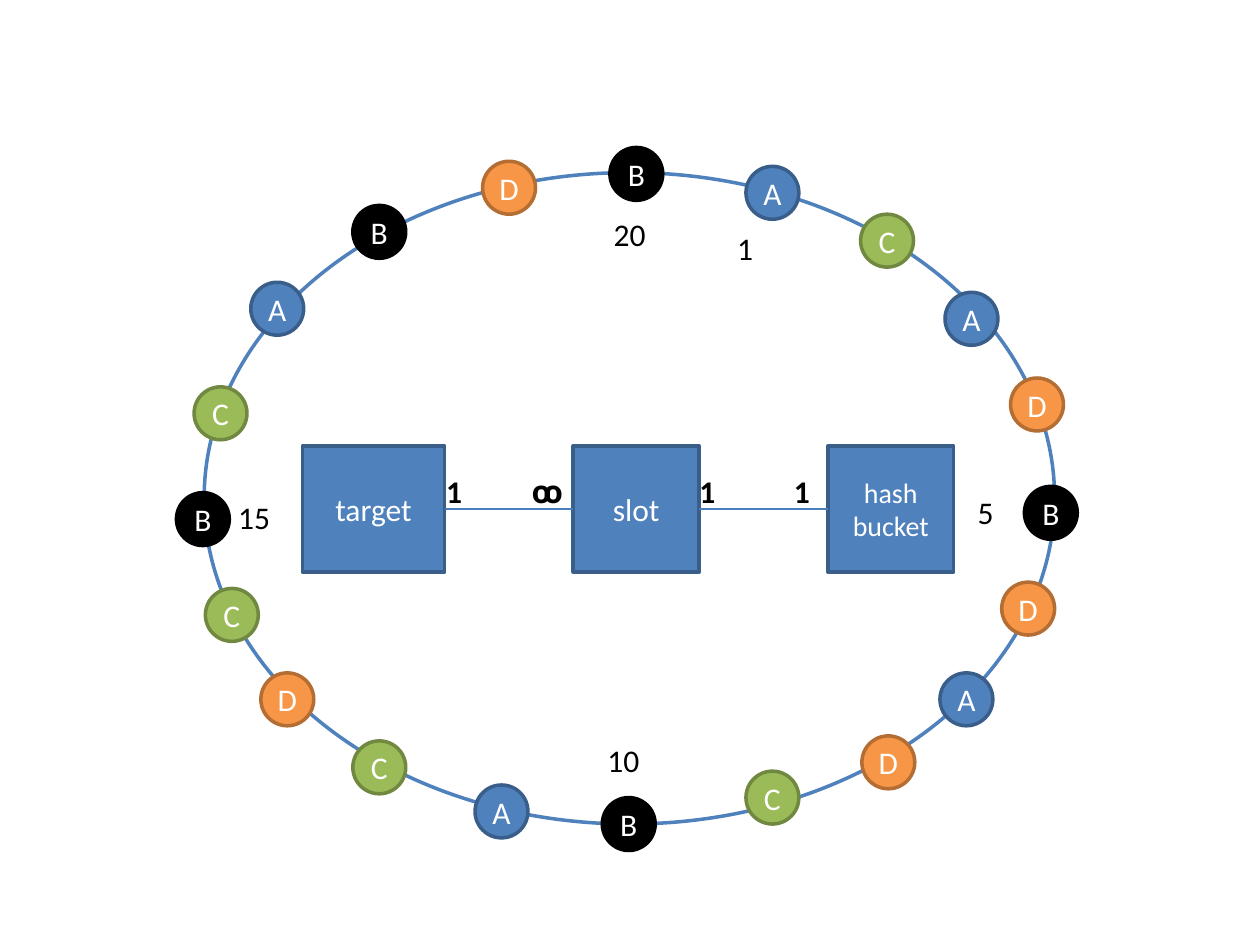
from itertools import pairwise

from lxml.etree import SubElement
from pptx import Presentation
from pptx.dml.color import RGBColor
from pptx.enum.shapes import MSO_CONNECTOR, MSO_SHAPE
from pptx.enum.text import MSO_ANCHOR, PP_ALIGN
from pptx.oxml.ns import qn
from pptx.util import Inches, Pt

BLUE = ("4F81BD", "3A5E8A")
NODE_COLORS = {
    "A": BLUE,
    "B": ("000000", "000000"),
    "C": ("9BBB59", "718841"),
    "D": ("F79646", "B46D33"),
}
NODES = [
    ("B", 3.22, -0.20), ("A", 4.30, -0.05), ("C", 5.21, 0.33), ("A", 5.88, 0.95),
    ("D", 6.40, 1.63), ("B", 6.51, 2.49), ("D", 6.33, 3.25), ("A", 5.84, 3.97),
    ("D", 5.22, 4.47), ("C", 4.30, 4.75), ("B", 3.16, 4.96), ("A", 2.15, 4.86),
    ("C", 1.18, 4.51), ("D", 0.45, 3.97), ("C", 0.01, 3.30), ("B", -0.22, 2.54),
    ("C", -0.08, 1.70), ("A", 0.37, 0.87), ("B", 1.18, 0.26), ("D", 2.21, -0.09),
]
POSITIONS = [
    ("1", 4.18, 0.40, 0.24), ("5", 6.09, 2.49, 0.24), ("10", 3.15, 4.46, 0.38),
    ("15", 0.22, 2.53, 0.38), ("20", 3.20, 0.29, 0.38),
]
ENTITIES = [("target", 0, 1.13, 18), ("slot", 2.15, 1, 18), ("hash bucket", 4.17, 1, 16)]
CARDINALITIES = [("1", 1.09), ("ꝏ", 1.77), ("1", 3.10), ("1", 3.85)]
NODE_SIZE = 0.42


def rgb(color):
    return RGBColor.from_string(color)


def set_text(sp, text, color, size=18, margin=0.05, bold=False):
    tf = sp.text_frame
    tf.margin_left = tf.margin_right = tf.margin_top = tf.margin_bottom = Inches(margin)
    tf.text = text
    p = tf.paragraphs[0]
    f = p.runs[0].font
    f.name, f.size, f.bold = "Calibri", Pt(size), bold
    f.color.rgb = rgb(color)
    return p


def add_shape(s, kind, left, top, width, height, colors):
    sp = s.shapes.add_shape(kind, Inches(left), Inches(top), Inches(width), Inches(height))
    sp.shadow.inherit = False
    fill, line = colors
    sp.fill.solid()
    sp.fill.fore_color.rgb = rgb(fill)
    sp.line.color.rgb = rgb(line)
    sp.line.width = Pt(2)
    return sp


def center_text(sp, text, size, margin):
    p = set_text(sp, text, "FFFFFF", size, margin)
    p.alignment = PP_ALIGN.CENTER
    sp.text_frame.word_wrap = True
    sp.text_frame.vertical_anchor = MSO_ANCHOR.MIDDLE


def add_label(s, text, left, top, width, bold=False):
    sp = s.shapes.add_textbox(Inches(left), Inches(top), Inches(width), Inches(0.39))
    sp.text_frame.word_wrap = False
    set_text(sp, text, "000000", bold=bold)


def add_link(s, start, end):
    cn = s.shapes.add_connector(MSO_CONNECTOR.STRAIGHT, 0, 0, 0, 0)
    cn.begin_connect(start, 3)
    cn.end_connect(end, 1)
    cn.line.color.rgb = rgb("4A7EBB")
    cn.line.width = Pt(0.75)
    SubElement(cn._element.spPr, qn("a:effectLst"))


def add_ring(s, left, top, width, height):
    add_shape(s, MSO_SHAPE.OVAL, left, top, width, height, ("FFFFFF", BLUE[0]))
    for letter, dx, dy in NODES:
        node = add_shape(s, MSO_SHAPE.OVAL, left + dx, top + dy,
                         NODE_SIZE, NODE_SIZE, NODE_COLORS[letter])
        center_text(node, letter, 18, 0)
    for text, dx, dy, label_width in POSITIONS:
        add_label(s, text, left + dx, top + dy, label_width)


def add_relations(s, left, top, height):
    boxes = []
    for name, dx, width, size in ENTITIES:
        box = add_shape(s, MSO_SHAPE.RECTANGLE, left + dx, top, width, height, BLUE)
        center_text(box, name, size, 0.05)
        boxes.append(box)
    for start, end in pairwise(boxes):
        add_link(s, start, end)
    for text, dx in CARDINALITIES:
        add_label(s, text, left + dx, top + 0.16, 0.26 if text == "1" else 0.33, bold=True)


def main():
    prs = Presentation()
    prs.slide_width, prs.slide_height = Inches(10), Inches(7.5)
    s = prs.slides.add_slide(prs.slide_layouts[6])
    add_ring(s, 1.62, 1.37, 6.75, 5.17)
    add_relations(s, 2.4, 3.54, 1)
    prs.save("out.pptx")


if __name__ == "__main__":
    main()
